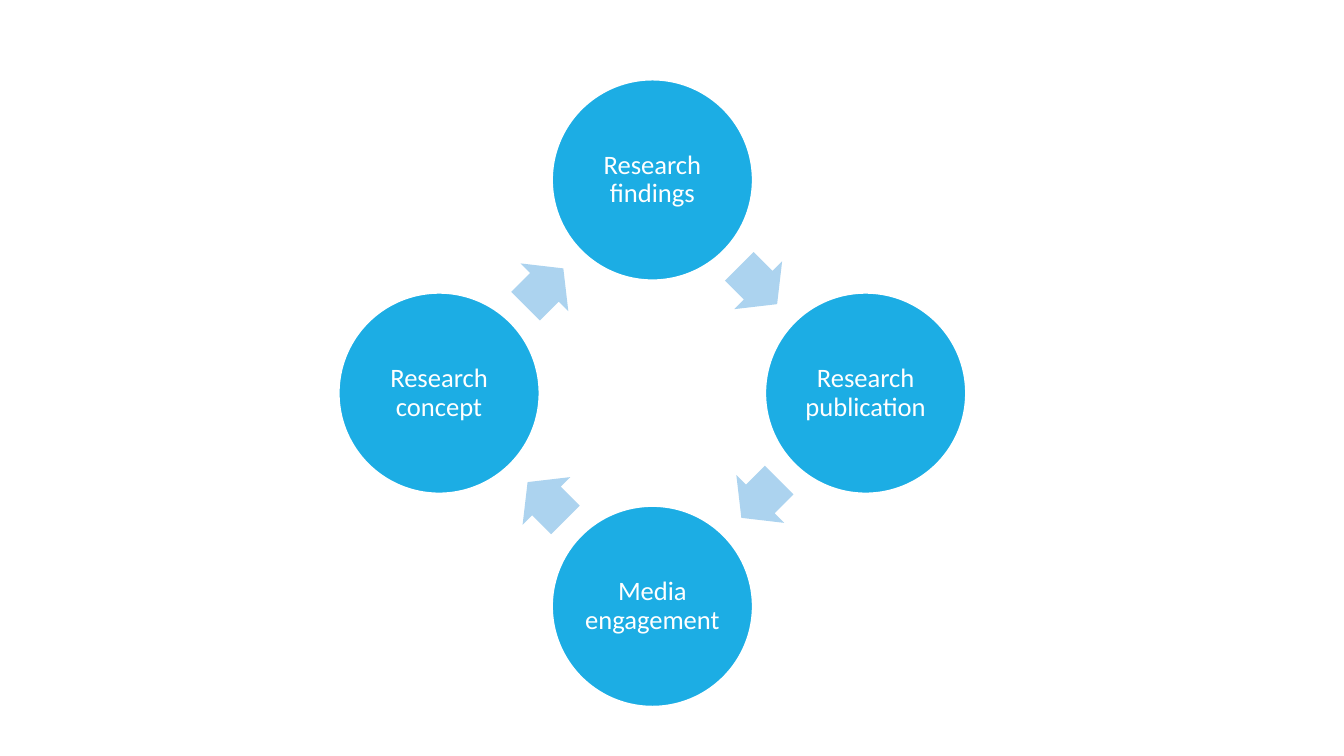
from dataclasses import dataclass

from pptx import Presentation
from pptx.dml.color import RGBColor
from pptx.enum.shapes import MSO_SHAPE
from pptx.enum.text import MSO_ANCHOR, PP_ALIGN
from pptx.util import Inches, Pt

OVAL = MSO_SHAPE.OVAL
ARROW = MSO_SHAPE.RIGHT_ARROW
MIDDLE = MSO_ANCHOR.MIDDLE
CENTER = PP_ALIGN.CENTER


@dataclass(frozen=True)
class Theme:
    """Colours and type of the slide."""
    blue: RGBColor = RGBColor(0x1C, 0xAD, 0xE4)
    pale: RGBColor = RGBColor(0xAC, 0xD3, 0xEF)
    white: RGBColor = RGBColor(0xFF, 0xFF, 0xFF)
    font: str = "Calibri"
    size: float = 19
    line: float = 1.25


THEME = Theme()
STEPS = ["Research findings", "Research publication",
         "Media engagement", "Research concept"]


def add_shape(slide, kind, x, y, width, height, fill):
    """Add a flat filled shape centred on x, y."""
    shape = slide.shapes.add_shape(
        kind, Inches(x - width / 2), Inches(y - height / 2),
        Inches(width), Inches(height))
    shape.shadow.inherit = False
    shape.fill.solid()
    shape.fill.fore_color.rgb = fill
    return shape


def add_step(slide, x, y, size, label):
    """Add a labelled circle centred on x, y."""
    disc = add_shape(slide, OVAL, x, y, size, size, THEME.blue)
    disc.line.color.rgb = THEME.white
    disc.line.width = Pt(THEME.line)
    frame = disc.text_frame
    frame.word_wrap = True
    frame.vertical_anchor = MIDDLE
    frame.margin_left = frame.margin_right = Inches(0.03)
    frame.margin_top = frame.margin_bottom = Inches(0.03)
    frame.text = label
    para = frame.paragraphs[0]
    para.alignment = CENTER
    para.line_spacing = 0.9
    font = para.runs[0].font
    font.name = THEME.font
    font.size = Pt(THEME.size)
    font.color.rgb = THEME.white


def add_arrow(slide, x, y, angle):
    """Add a turned arrow centred on x, y."""
    arrow = add_shape(slide, ARROW, x, y, 0.53, 0.67, THEME.pale)
    arrow.line.fill.background()
    arrow.adjustments[0] = 0.6
    arrow.adjustments[1] = 0.5
    arrow.rotation = angle


def add_cycle(slide, left, top, side, steps):
    """Place four steps and their arrows clockwise in a square box."""
    size = 1.99
    x, y = left + side / 2, top + side / 2
    step = (0, (size - side) / 2)
    gap = (1.05, -1.07)
    for i, label in enumerate(steps):
        add_step(slide, x + step[0], y + step[1], size, label)
        add_arrow(slide, x + gap[0], y + gap[1], 45 + 90 * i)
        step = (-step[1], step[0])
        gap = (-gap[1], gap[0])


def main():
    """Build and save the slide."""
    deck = Presentation()
    deck.slide_width = Inches(13.33)
    deck.slide_height = Inches(7.5)
    slide = deck.slides.add_slide(deck.slide_layouts[6])
    add_cycle(slide, 3.36, 0.79, 6.22, STEPS)
    deck.save("out.pptx")


if __name__ == "__main__":
    main()
